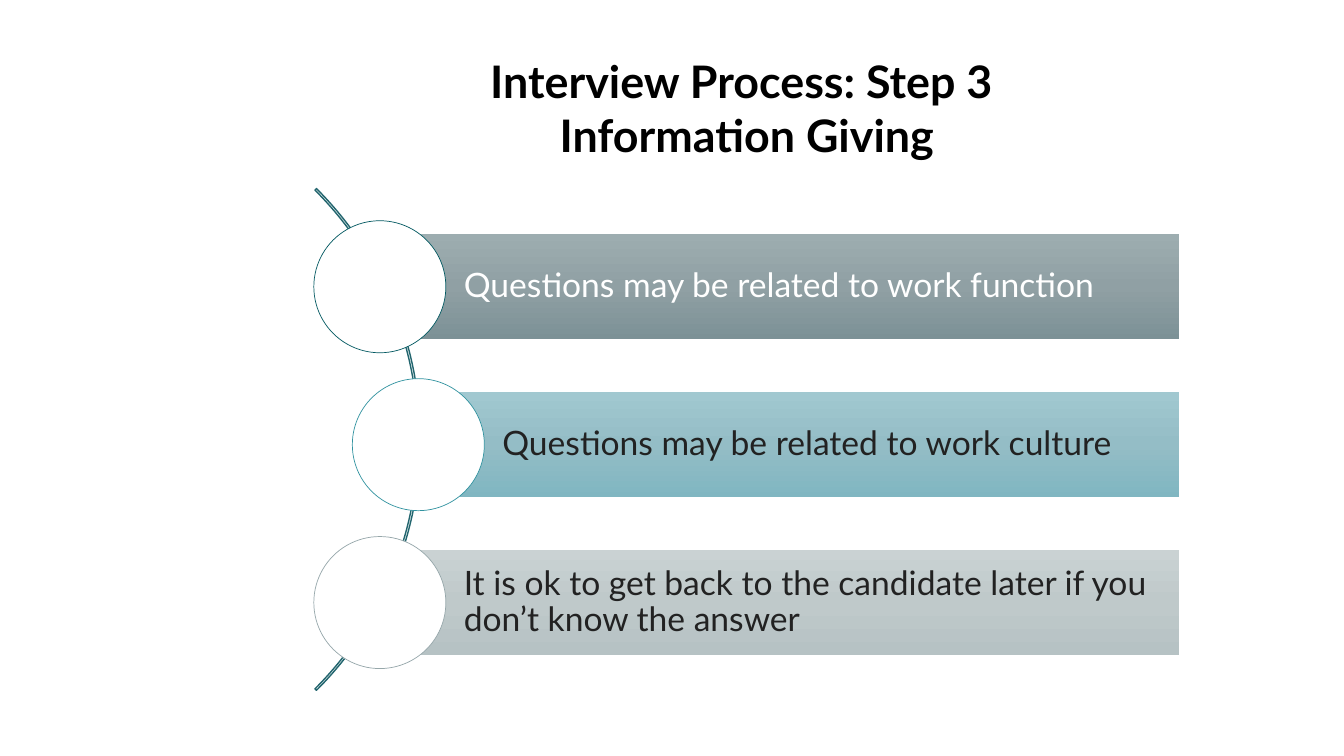
from copy import deepcopy
from dataclasses import dataclass

from pptx import Presentation
from pptx.dml.color import RGBColor as Color
from pptx.enum.shapes import MSO_SHAPE as Shape
from pptx.enum.text import MSO_ANCHOR as Anchor, PP_ALIGN as Align
from pptx.oxml.ns import qn
from pptx.util import Pt


@dataclass(frozen=True)
class Theme:
    font: str = "Lato"
    title_size: float = 32
    body_size: float = 24
    black: str = "000000"
    dark: str = "222222"
    white: str = "FFFFFF"
    arc: str = "22656E"
    slate: tuple = ("9DADB0", "90A0A4", "7C9196")
    teal: tuple = ("A1C8D0", "94BDC6", "80B6C1")
    silver: tuple = ("CAD2D3", "BFC9CA", "B6C2C4")
    slate_ring: str = "035961"
    teal_ring: str = "3293A0"
    silver_ring: str = "96A7AA"


def write_text(frame, text, *, font, size, color, bold=False, align=Align.LEFT,
               anchor=Anchor.MIDDLE, spacing=1.0, after=0, insets=(7.2, 3.6, 7.2, 3.6)):
    frame.word_wrap = True
    frame.vertical_anchor = anchor
    frame.margin_left, frame.margin_top, frame.margin_right, frame.margin_bottom = map(Pt, insets)
    frame.text = text
    for paragraph in frame.paragraphs:
        paragraph.alignment = align
        paragraph.line_spacing = spacing
        paragraph.space_before = Pt(0)
        paragraph.space_after = Pt(after)
        for run in paragraph.runs:
            run.font.name = font
            run.font.size = Pt(size)
            run.font.bold = bold
            run.font.color.rgb = Color.from_string(color)


class SlideBuilder:
    def __init__(self, slide, theme):
        self.slide = slide
        self.theme = theme

    def title(self, text, left, top, width, height):
        shape = self.slide.shapes.title
        shape.left, shape.top, shape.width, shape.height = map(Pt, (left, top, width, height))
        write_text(shape.text_frame, text, font=self.theme.font, size=self.theme.title_size,
                   color=self.theme.black, bold=True, align=Align.CENTER)

    def shape(self, kind, left, top, width, height, fill=None, line=None, weight=1):
        shape = self.slide.shapes.add_shape(kind, *map(Pt, (left, top, width, height)))
        shape.shadow.inherit = False
        if fill:
            shape.fill.solid()
            shape.fill.fore_color.rgb = Color.from_string(fill)
        else:
            shape.fill.background()
        if line:
            shape.line.color.rgb = Color.from_string(line)
            shape.line.width = Pt(weight)
        else:
            shape.line.fill.background()
        return shape

    def arc(self, left, top, diameter):
        shape = self.shape(Shape.BLOCK_ARC, left, top, diameter, diameter, line=self.theme.arc)
        for index, value in enumerate((189, 27, 0.003)):
            shape.adjustments[index] = value

    def bar(self, text, left, top, width, height, colors, text_color):
        shape = self.shape(Shape.RECTANGLE, left, top, width, height)
        shape.fill.gradient()
        shape.fill.gradient_angle = 270
        stop_list = shape.element.spPr.find(".//" + qn("a:gsLst"))
        stop_list.insert(1, deepcopy(stop_list[0]))
        for stop, position, color in zip(shape.fill.gradient_stops, (0, 0.5, 1), colors):
            stop.position = position
            stop.color.rgb = Color.from_string(color)
        write_text(shape.text_frame, text, font=self.theme.font, size=self.theme.body_size,
                   color=text_color, spacing=0.9, after=8.4, insets=(60, 5, 5, 5))

    def circle(self, center_x, center_y, diameter, ring):
        self.shape(Shape.OVAL, center_x - diameter / 2, center_y - diameter / 2,
                   diameter, diameter, self.theme.white, ring, 0.5)


def main():
    theme = Theme()
    presentation = Presentation()
    presentation.slide_width, presentation.slide_height = Pt(960), Pt(540)
    slide = presentation.slides.add_slide(presentation.slide_layouts[5])
    builder = SlideBuilder(slide, theme)
    builder.title("Interview Process: Step 3 \nInformation Giving", 247, 34.5, 573, 85)
    builder.arc(-206.6, 60.5, 506.9)

    bar_right, bar_height, circle_diameter = 842.4, 75.4, 94.3
    first_center, row_pitch = 204.8, 112.8
    rows = (
        ("Questions may be related to work function", 271.3,
         theme.slate, theme.slate_ring, theme.white),
        ("Questions may be related to work culture", 298.8,
         theme.teal, theme.teal_ring, theme.dark),
        ("It is ok to get back to the candidate later if you don’t know the answer", 271.3,
         theme.silver, theme.silver_ring, theme.dark),
    )
    for index, (text, left, colors, ring, text_color) in enumerate(rows):
        center = first_center + index * row_pitch
        builder.bar(text, left, center - bar_height / 2, bar_right - left, bar_height,
                    colors, text_color)
        builder.circle(left, center, circle_diameter, ring)

    presentation.save("out.pptx")


if __name__ == "__main__":
    main()
